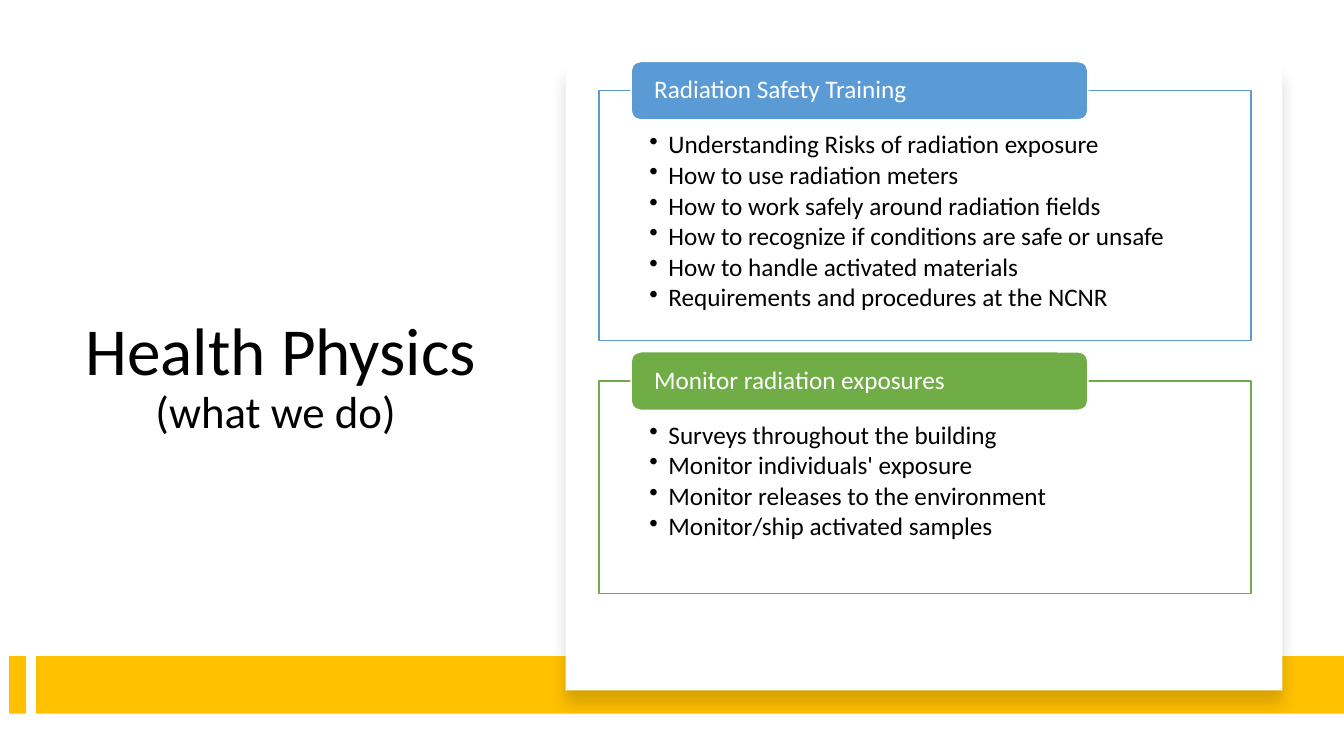
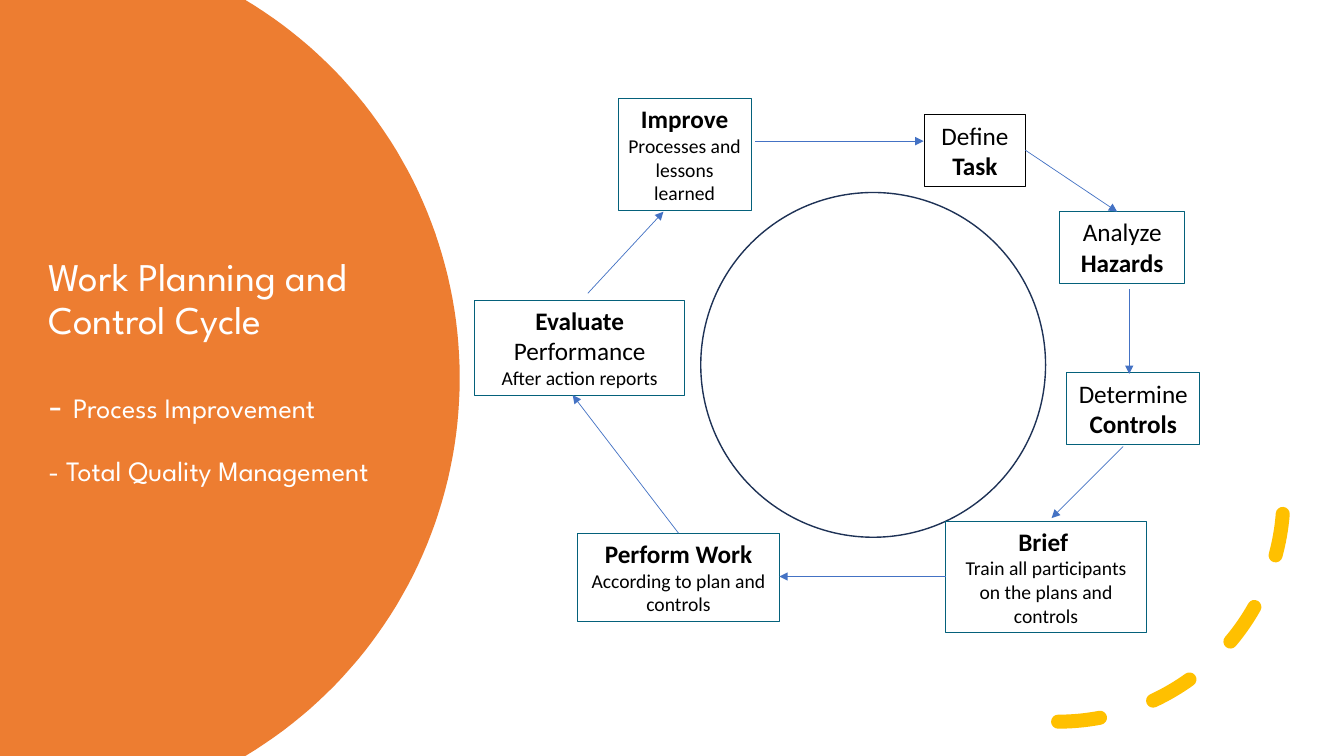
import math

from lxml import etree
from pptx import Presentation
from pptx.dml.color import RGBColor
from pptx.enum import shapes, text
from pptx.oxml import ns
from pptx.util import Inches, Pt

BODY_FONT, ACCENT_FONT = "Calibri", "League Spartan"
BLACK, WHITE, GOLD = "000000", "FFFFFF", "FFC000"
BLUE, GREEN, ORANGE = "5B9BD5", "70AD47", "ED7D31"
NAVY, TEAL, ARROW_BLUE = "1E3256", "04617B", "4472C4"
SLIDE_WIDTH, SLIDE_HEIGHT = 13.33, 7.5

SECTIONS = [
    ("Radiation Safety Training", BLUE, 0.9, 2.48, [
        "Understanding Risks of radiation exposure",
        "How to use radiation meters",
        "How to work safely around radiation fields",
        "How to recognize if conditions are safe or unsafe",
        "How to handle activated materials",
        "Requirements and procedures at the NCNR"]),
    ("Monitor radiation exposures", GREEN, 3.78, 2.11, [
        "Surveys throughout the building",
        "Monitor individuals' exposure",
        "Monitor releases to the environment",
        "Monitor/ship activated samples"]),
]

# Each step: place, outline, paragraphs of (words, size, bold) runs
STEPS = [
    ((9.17, 1.14, 1, 0.71), BLACK, [[("Define ", 18, False), ("Task", 18, True)]]),
    ((10.51, 2.1, 1.24, 0.71), TEAL, [[("Analyze ", 18, False), ("Hazards", 18, True)]]),
    ((10.58, 3.7, 1.32, 0.71), TEAL, [[("Determine ", 18, False), ("Controls", 18, True)]]),
    ((9.38, 5.17, 1.99, 1.11), TEAL, [
        [("Brief ", 18, True)],
        [("Train all participants on the plans and controls", 14, False)]]),
    ((5.73, 5.29, 2, 0.88), TEAL, [
        [("Perform Work", 18, True)], [("According to plan and controls", 14, False)]]),
    ((4.71, 2.98, 2.08, 0.94), TEAL, [
        [("Evaluate ", 18, True), ("Performance", 18, False)],
        [("After action reports", 14, False)]]),
    ((6.13, 0.98, 1.32, 1.11), TEAL, [
        [("Improve", 18, True)], [("Processes and lessons learned", 14, False)]]),
]

ARROWS = [
    (7.49, 1.4, 9.16, 1.4), (10.17, 1.49, 11.08, 2.1), (11.2, 2.87, 11.2, 3.71),
    (11.14, 4.43, 10.43, 5.14), (9.38, 5.72, 7.73, 5.72),
    (6.73, 5.29, 5.68, 3.92), (5.83, 2.91, 6.58, 2.1),
]


def rgb(value):
    return RGBColor.from_string(value)


def add_xml(parent, tag, **attributes):
    return etree.SubElement(parent, ns.qn(tag), attributes)


def paint(shape, fill=None, line=None, width=1):
    """Set fill and outline; None leaves either one out."""
    shape.shadow.inherit = False
    if fill:
        shape.fill.solid()
        shape.fill.fore_color.rgb = rgb(fill)
    else:
        shape.fill.background()
    if line:
        shape.line.color.rgb = rgb(line)
        shape.line.width = Pt(width)
    else:
        shape.line.fill.background()


def add_box(page, kind, place, fill=None, line=None, width=1):
    box = page.shapes.add_shape(kind, *map(Inches, place))
    paint(box, fill, line, width)
    return box


def set_frame(shape, anchor, margins=(0.1, 0.05, 0.1, 0.05)):
    frame = shape.text_frame
    frame.word_wrap = True
    frame.auto_size = text.MSO_AUTO_SIZE.NONE
    frame.vertical_anchor = anchor
    (frame.margin_left, frame.margin_top,
     frame.margin_right, frame.margin_bottom) = map(Inches, margins)
    return frame


def write(frame, paragraphs, align, color=BLACK, font=BODY_FONT, spacing=1):
    """Fill a frame with paragraphs, each a list of (words, size, bold) runs."""
    for index, runs in enumerate(paragraphs):
        para = frame.add_paragraph() if index else frame.paragraphs[0]
        para.alignment = align
        para.line_spacing = spacing
        para.space_before = para.space_after = Pt(0)
        for words, size, bold in runs:
            span = para.add_run()
            span.text = words
            span.font.name = font
            span.font.size = Pt(size)
            span.font.bold = bold
            span.font.color.rgb = rgb(color)


def write_title(page, place, paragraphs, align, **style):
    title = page.shapes.title
    title.left, title.top, title.width, title.height = map(Inches, place)
    frame = set_frame(title, text.MSO_ANCHOR.MIDDLE)
    write(frame, paragraphs, align, spacing=0.9, **style)
    return frame


def add_bullet(para):
    para.space_after = Pt(2.4)
    properties = para._p.get_or_add_pPr()
    properties.set("marL", str(Inches(0.19)))
    properties.set("indent", str(-Inches(0.19)))
    add_xml(properties, "a:buChar", char="•")


def add_card(page, place):
    """Add a white panel with a soft shadow below it."""
    card = add_box(page, shapes.MSO_SHAPE.RECTANGLE, place, WHITE)
    effects = card._element.spPr.find(ns.qn("a:effectLst"))
    shadow = add_xml(effects, "a:outerShdw", blurRad=str(Pt(11)), dist=str(Pt(10)),
                     dir="5400000", algn="t", rotWithShape="0")
    add_xml(add_xml(shadow, "a:srgbClr", val=BLACK), "a:alpha", val="15000")


def add_section(page, heading, color, top, height, items):
    left = text.PP_ALIGN.LEFT
    panel = add_box(page, shapes.MSO_SHAPE.RECTANGLE, (5.94, top, 6.47, height), WHITE, color)
    frame = set_frame(panel, text.MSO_ANCHOR.TOP, (0.5, 0.41, 0.5, 0.14))
    write(frame, [[(item, 18, False)] for item in items], left, spacing=0.9)
    for para in frame.paragraphs:
        add_bullet(para)
    tab = add_box(page, shapes.MSO_SHAPE.ROUNDED_RECTANGLE,
                  (6.26, top - 0.29, 4.53, 0.58), color, WHITE)
    frame = set_frame(tab, text.MSO_ANCHOR.MIDDLE, (0.2, 0, 0.2, 0))
    write(frame, [[(heading, 18, False)]], left, WHITE, spacing=0.9)


def add_arrow(page, *ends):
    arrow = page.shapes.add_connector(shapes.MSO_CONNECTOR.STRAIGHT, *map(Inches, ends))
    arrow.line.color.rgb = rgb(ARROW_BLUE)
    arrow.line.width = Pt(0.5)
    add_xml(arrow.line._get_or_add_ln(), "a:tailEnd", type="triangle")
    add_xml(arrow._element.spPr, "a:effectLst")


def add_round_panel(page, center_x=0.19, radius=4.37, steps=80):
    """Add the part of a large disc that lies on the slide's left side."""
    middle = SLIDE_HEIGHT / 2
    limit = math.asin(middle / radius)
    angles = [limit * (2 * step / steps - 1) for step in range(steps + 1)]
    points = [(center_x + radius * math.cos(angle), middle + radius * math.sin(angle))
              for angle in angles] + [(0, SLIDE_HEIGHT)]
    builder = page.shapes.build_freeform(0, 0, scale=Inches(1) / 1000)
    builder.add_line_segments([(x * 1000, y * 1000) for x, y in points])
    paint(builder.convert_to_shape(), ORANGE)


def add_dashed_arc(page):
    arc = add_box(page, shapes.MSO_SHAPE.ARC, (8.26, 2.69, 4.47, 4.47), line=GOLD, width=10)
    arc._element.spPr.find(ns.qn("a:xfrm")).set("flipV", "1")
    outline = arc.line._get_or_add_ln()
    outline.set("cap", "rnd")
    add_xml(outline, "a:prstDash", val="dash")


def build_health_physics(page):
    write_title(page, (0.71, 1.2, 4.15, 5.1),
                [[("Health Physics", 48, False)], [("(what we do) ", 32, False)]],
                text.PP_ALIGN.CENTER)
    for left, width in ((0.09, 0.17), (0.36, 12.97)):
        add_box(page, shapes.MSO_SHAPE.RECTANGLE, (left, 6.51, width, 0.57), GOLD)
    add_card(page, (5.61, 0.64, 7.11, 6.21))
    for section in SECTIONS:
        add_section(page, *section)


def build_work_cycle(page):
    add_round_panel(page)
    # The title placeholder comes first, so bring it in front of the panel
    page.shapes._spTree.append(page.shapes.title._element)
    frame = write_title(page, (0.38, 1.26, 3.87, 4.88), [
        [("Work Planning and Control Cycle", 28, False)],
        [("- ", 28, False), ("Process Improvement", 20, False)],
        [("- Total Quality Management", 20, False)],
    ], text.PP_ALIGN.LEFT, color=WHITE, font=ACCENT_FONT)
    for para, gap in zip(frame.paragraphs[1:], (30, 22)):
        para.space_before = Pt(gap)
    add_dashed_arc(page)
    add_box(page, shapes.MSO_SHAPE.OVAL, (6.95, 1.91, 3.42, 3.42), line=NAVY)
    for place, outline, paragraphs in STEPS:
        box = add_box(page, shapes.MSO_SHAPE.RECTANGLE, place, line=outline, width=0.75)
        write(set_frame(box, text.MSO_ANCHOR.TOP), paragraphs, text.PP_ALIGN.CENTER)
    for ends in ARROWS:
        add_arrow(page, *ends)


def main():
    deck = Presentation()
    deck.slide_width = Inches(SLIDE_WIDTH)
    deck.slide_height = Inches(SLIDE_HEIGHT)
    title_only = deck.slide_layouts[5]
    for build in (build_health_physics, build_work_cycle):
        build(deck.slides.add_slide(title_only))
    deck.save("out.pptx")


if __name__ == "__main__":
    main()
